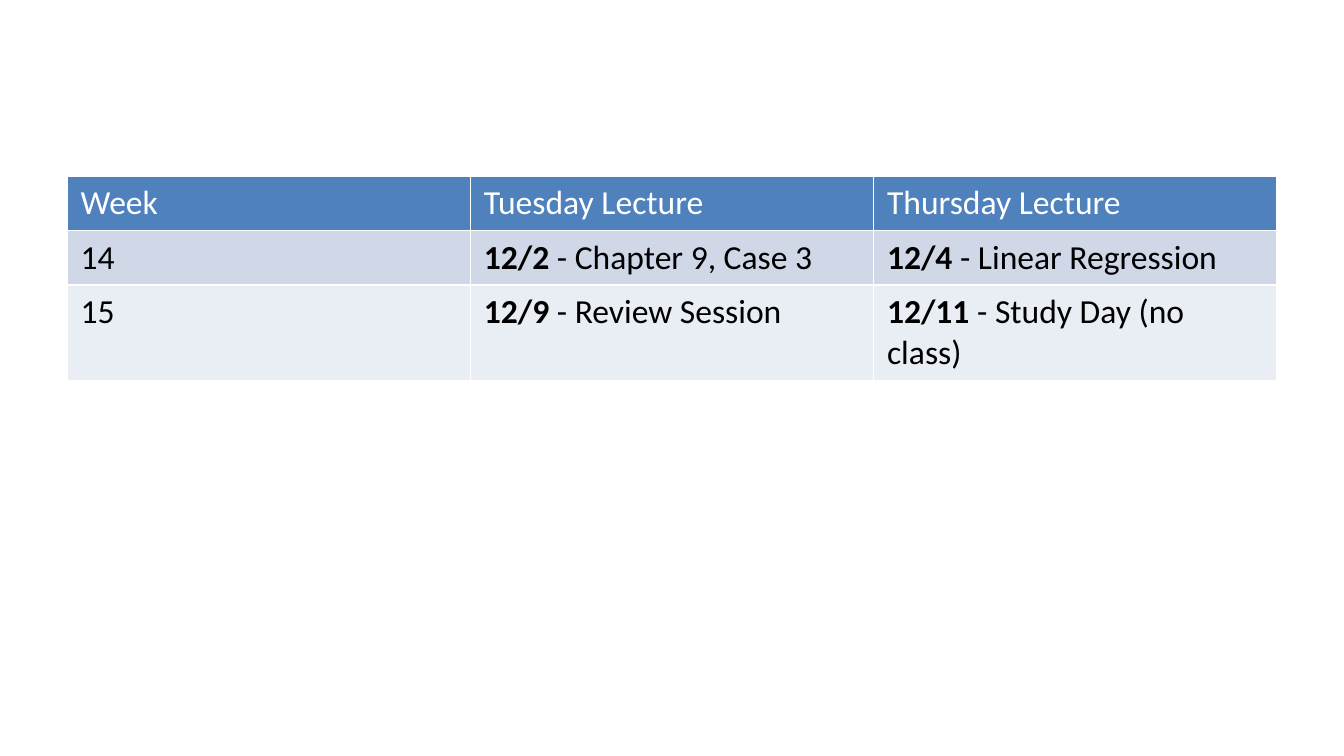
from dataclasses import dataclass

from pptx import Presentation
from pptx.dml.color import RGBColor
from pptx.table import _Cell
from pptx.util import Inches, Pt

COLORS = {
    "header": "4F81BD",
    "odd_row": "D0D8E8",
    "even_row": "E9EDF4",
    "white": "FFFFFF",
    "black": "000000",
}
SLIDE_WIDTH = Inches(10)
COLUMN_WIDTH = 3


@dataclass(frozen=True)
class Entry:
    text: str
    date: str = ""


@dataclass(frozen=True)
class ScheduleRow:
    entries: tuple[Entry, ...]
    height: float
    fill: str
    color: str = "black"


SCHEDULE = (
    ScheduleRow(
        (Entry("Week"), Entry("Tuesday Lecture"), Entry("Thursday Lecture")),
        0.4, "header", color="white",
    ),
    ScheduleRow(
        (Entry("14"), Entry(" - Chapter 9, Case 3", "12/2"), Entry(" - Linear Regression", "12/4")),
        0.4, "odd_row",
    ),
    ScheduleRow(
        (Entry("15"), Entry(" - Review Session", "12/9"), Entry(" - Study Day (no class)", "12/11")),
        0.7, "even_row",
    ),
)


def add_text(cell: _Cell, text: str, *, color: str, bold: bool = False, size: float = 18) -> None:
    span = cell.text_frame.paragraphs[0].add_run()
    span.text = text
    span.font.name = "Calibri"
    span.font.size = Pt(size)
    span.font.bold = bold
    span.font.color.rgb = RGBColor.from_string(COLORS[color])


def draw_cell(cell: _Cell, entry: Entry, row: ScheduleRow) -> None:
    cell.fill.solid()
    cell.fill.fore_color.rgb = RGBColor.from_string(COLORS[row.fill])
    if entry.date:
        add_text(cell, entry.date, color=row.color, bold=True)
    add_text(cell, entry.text, color=row.color)


def main() -> None:
    deck = Presentation()
    deck.slide_width = SLIDE_WIDTH
    deck.slide_height = SLIDE_WIDTH * 9 // 16
    page = deck.slides.add_slide(deck.slide_layouts[6])

    column_count = len(SCHEDULE[0].entries)
    table = page.shapes.add_table(
        len(SCHEDULE), column_count, Inches(0.5), Inches(1.31),
        Inches(COLUMN_WIDTH * column_count), Inches(sum(row.height for row in SCHEDULE)),
    ).table
    for column in table.columns:
        column.width = Inches(COLUMN_WIDTH)

    for row_index, row in enumerate(SCHEDULE):
        table.rows[row_index].height = Inches(row.height)
        for column_index, entry in enumerate(row.entries):
            draw_cell(table.cell(row_index, column_index), entry, row)

    deck.save("out.pptx")


if __name__ == "__main__":
    main()
